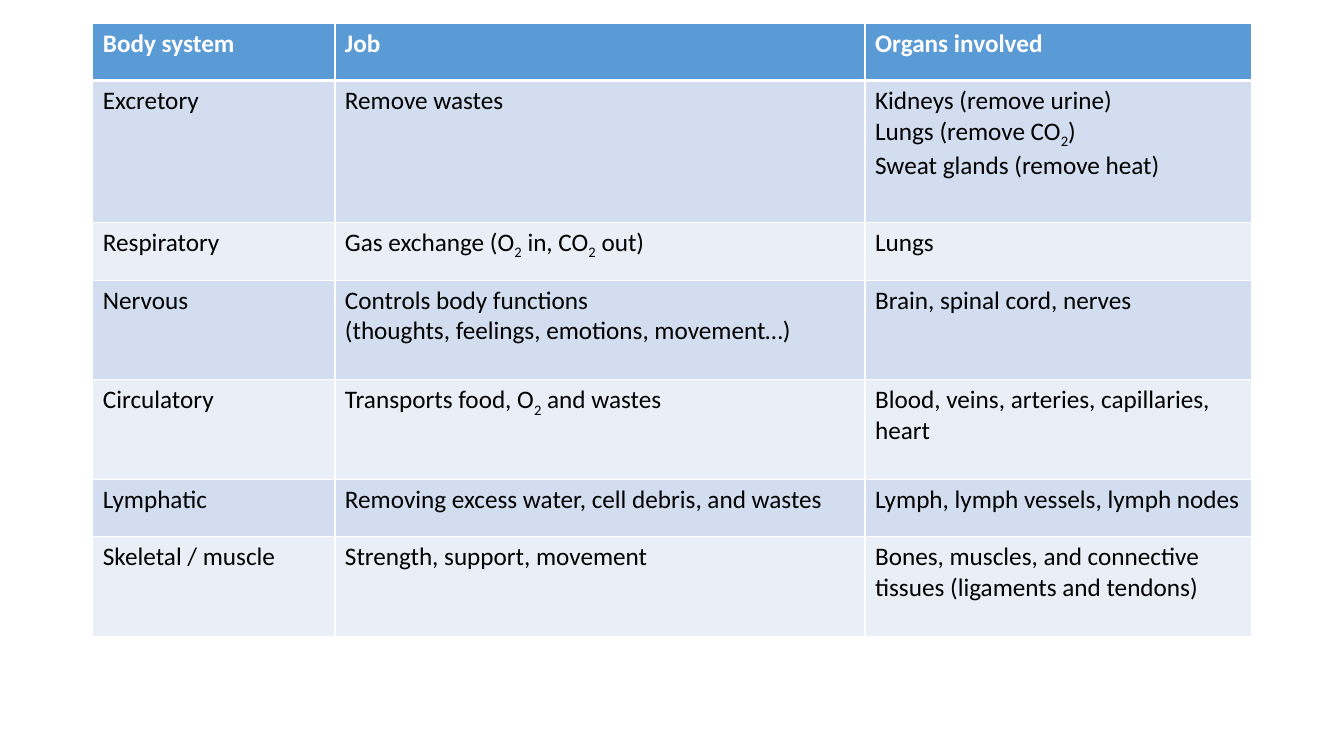
from lxml import etree
from pptx import Presentation
from pptx import util as u
from pptx.dml.color import RGBColor
from pptx.oxml import ns

WHITE = RGBColor(0xFF, 0xFF, 0xFF)
BLACK = RGBColor(0, 0, 0)
BLUE = RGBColor(0x5B, 0x9B, 0xD5)
MID = RGBColor(0xD2, 0xDE, 0xEF)
PALE = RGBColor(0xEA, 0xEF, 0xF7)

BOX = (2.34, 0.58, 29.2, 15.47)
COLS = (6.1, 13.36, 9.74)
ROWS = (1.45, 3.58, 1.45, 2.51, 2.51, 1.45, 2.51)
SYSTEMS = [
    ("Body system", "Job", "Organs involved"),
    ("Excretory", "Remove wastes",
     "Kidneys (remove urine)\nLungs (remove CO_2_)\nSweat glands (remove heat)"),
    ("Respiratory", "Gas exchange (O_2_ in, CO_2_ out)", "Lungs"),
    ("Nervous",
     "Controls body functions\n(thoughts, feelings, emotions, movement…)",
     "Brain, spinal cord, nerves"),
    ("Circulatory", "Transports food, O_2_ and wastes",
     "Blood, veins, arteries, capillaries, heart"),
    ("Lymphatic", "Removing excess water, cell debris, and wastes",
     "Lymph, lymph vessels, lymph nodes"),
    ("Skeletal / muscle", "Strength, support, movement",
     "Bones, muscles, and connective tissues (ligaments and tendons)"),
]


def write(frame, words, size=18, color=BLACK, bold=False, face="Calibri"):
    """Fill a text frame; parts between underscores become subscripts."""
    frame.word_wrap = True
    for i, line in enumerate(words.split("\n")):
        para = frame.add_paragraph() if i else frame.paragraphs[0]
        for j, part in enumerate(line.split("_")):
            run = para.add_run()
            run.text = part
            font = run.font
            font.size, font.bold, font.name = u.Pt(size), bold, face
            font.color.rgb = color
            if j % 2:
                run.font._element.set("baseline", "-25000")


def edge(cell, **widths):
    """Draw white borders, with widths in points by side: L, R, T, B."""
    props = cell._tc.get_or_add_tcPr()
    for side, width in widths.items():
        line = etree.SubElement(props, ns.qn(f"a:ln{side}"), w=str(u.Pt(width)))
        fill = etree.SubElement(line, ns.qn("a:solidFill"))
        etree.SubElement(fill, ns.qn("a:srgbClr"), val=str(WHITE))


def chart_systems(slide, box):
    left, top, width, height = map(u.Cm, box)
    table = slide.shapes.add_table(
        len(ROWS), len(COLS), left, top, width, height).table
    for col, size in zip(table.columns, COLS):
        col.width = u.Cm(size)
    for r, (row, size) in enumerate(zip(table.rows, ROWS)):
        row.height = u.Cm(size)
        head = r == 0
        shade = BLUE if head else MID if r % 2 else PALE
        for cell, words in zip(row.cells, SYSTEMS[r]):
            edge(cell, L=1, R=1, T=3 if r == 1 else 1, B=3 if head else 1)
            cell.fill.solid()
            cell.fill.fore_color.rgb = shade
            write(cell.text_frame, words, bold=head,
                  color=WHITE if head else BLACK)


def main():
    deck = Presentation()
    deck.slide_width, deck.slide_height = u.Cm(33.87), u.Cm(19.05)
    slide = deck.slides.add_slide(deck.slide_layouts[6])
    chart_systems(slide, BOX)
    deck.save("out.pptx")


if __name__ == "__main__":
    main()
